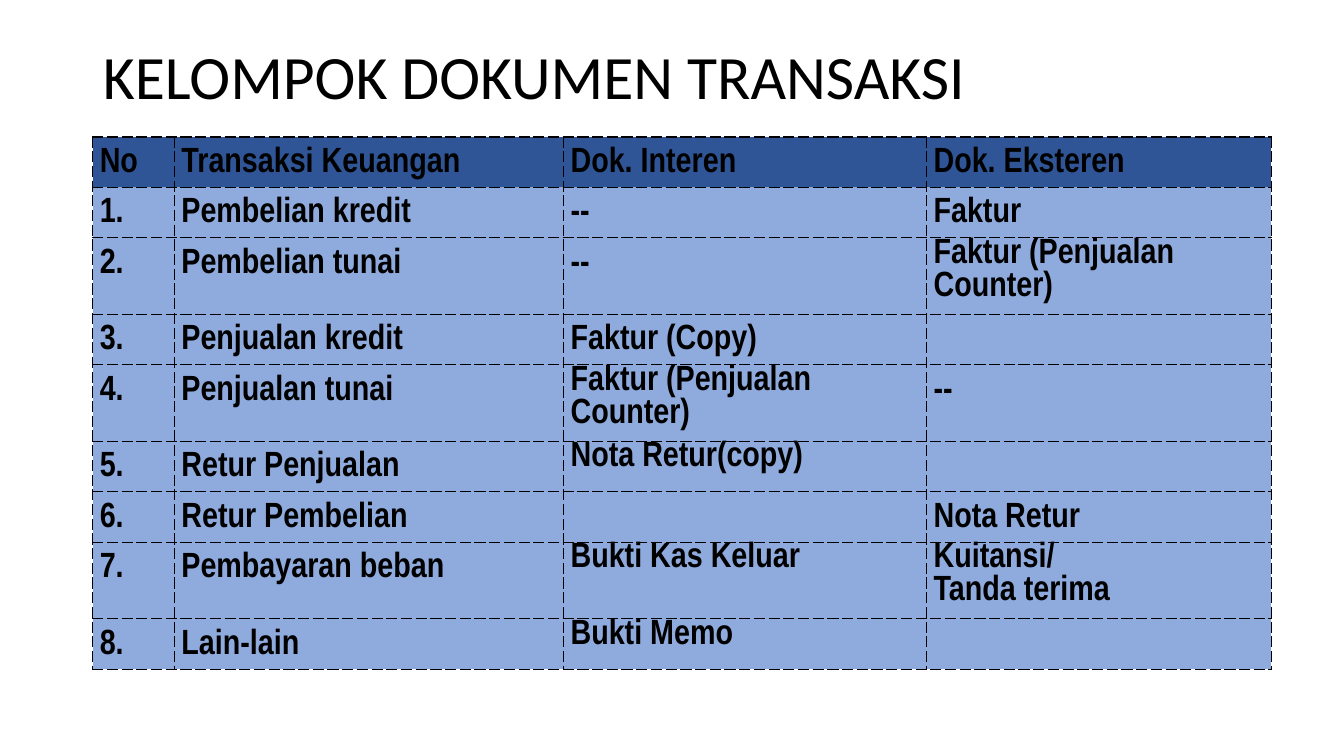
import lxml.etree
import pptx
import pptx.dml.color
import pptx.enum.dml
import pptx.enum.text
import pptx.oxml.ns
import pptx.util

Inches = pptx.util.Inches
Pt = pptx.util.Pt
RGBColor = pptx.dml.color.RGBColor

BLACK = RGBColor(0x00, 0x00, 0x00)
WHITE = RGBColor(0xFF, 0xFF, 0xFF)
HEADER_BLUE = RGBColor(0x2F, 0x55, 0x97)
BODY_BLUE = RGBColor(0x8F, 0xAA, 0xDC)

LOOSE = 1.3
TIGHT = Pt(23.5)
COLUMN_WIDTHS = [0.81, 3.86, 3.6, 3.42]
SINGLE_ROW, DOUBLE_ROW = 0.5, 0.76
COUNTER_INVOICE = "Faktur (Penjualan Counter)"
PAYMENT_RECEIPT = "Kuitansi/\nTanda terima"
TWO_LINE_ENTRIES = {COUNTER_INVOICE, PAYMENT_RECEIPT}
TIGHT_ENTRIES = TWO_LINE_ENTRIES | {"Nota Retur(copy)", "Bukti Kas Keluar", "Bukti Memo"}

HEADINGS = ["No", "Transaksi Keuangan", "Dok. Interen", "Dok. Eksteren"]
TRANSACTIONS = [
    ("Pembelian kredit", "--", "Faktur"),
    ("Pembelian tunai", "--", COUNTER_INVOICE),
    ("Penjualan kredit", "Faktur (Copy)", ""),
    ("Penjualan tunai", COUNTER_INVOICE, "--"),
    ("Retur Penjualan", "Nota Retur(copy)", ""),
    ("Retur Pembelian", "", "Nota Retur"),
    ("Pembayaran beban", "Bukti Kas Keluar", PAYMENT_RECEIPT),
    ("Lain-lain", "Bukti Memo", ""),
]


def format_paragraph(paragraph, font_name, size, spacing, bold=False):
    paragraph.line_spacing = spacing
    paragraph.font.name = font_name
    paragraph.font.size = Pt(size)
    paragraph.font.bold = bold
    paragraph.font.color.rgb = BLACK


def add_title(slide, left, top, width, height):
    title = slide.shapes.title
    title.left, title.top = Inches(left), Inches(top)
    title.width, title.height = Inches(width), Inches(height)
    frame = title.text_frame
    frame.text = "KELOMPOK DOKUMEN TRANSAKSI"
    frame.word_wrap = True
    frame.auto_size = pptx.enum.text.MSO_AUTO_SIZE.NONE
    frame.vertical_anchor = pptx.enum.text.MSO_ANCHOR.MIDDLE
    heading = frame.paragraphs[0]
    heading.alignment = pptx.enum.text.PP_ALIGN.LEFT
    format_paragraph(heading, "Calibri", 44, 0.9)


def add_dashed_borders(cell):
    properties = cell._tc.get_or_add_tcPr()
    qn = pptx.oxml.ns.qn
    for edge in ("a:lnL", "a:lnR", "a:lnT", "a:lnB"):
        border = lxml.etree.SubElement(properties, qn(edge), w=str(Pt(1)))
        fill = lxml.etree.SubElement(border, qn("a:solidFill"))
        lxml.etree.SubElement(fill, qn("a:srgbClr"), val=str(BLACK))
        lxml.etree.SubElement(border, qn("a:prstDash"), val="dash")


def fill_cell(cell, entry, colour):
    add_dashed_borders(cell)
    cell.fill.solid()
    cell.fill.fore_color.rgb = colour
    cell.margin_left = cell.margin_right = Inches(0.07)
    cell.margin_top = cell.margin_bottom = 0
    cell.text = entry
    spacing = TIGHT if entry in TIGHT_ENTRIES else LOOSE
    for paragraph in cell.text_frame.paragraphs:
        format_paragraph(paragraph, "Arial Narrow", 25, spacing, bold=True)


def add_document_table(slide, left, top):
    entries = [HEADINGS] + [
        [f"{number}.", *transaction]
        for number, transaction in enumerate(TRANSACTIONS, start=1)
    ]
    row_heights = [
        DOUBLE_ROW if TWO_LINE_ENTRIES.intersection(row) else SINGLE_ROW
        for row in entries
    ]
    documents = slide.shapes.add_table(
        len(entries), len(HEADINGS), Inches(left), Inches(top),
        Inches(sum(COLUMN_WIDTHS)), Inches(sum(row_heights)),
    ).table
    documents.horz_banding = False
    for column, width in zip(documents.columns, COLUMN_WIDTHS):
        column.width = Inches(width)
    for index, (row, height) in enumerate(zip(documents.rows, row_heights)):
        row.height = Inches(height)
        colour = BODY_BLUE if index else HEADER_BLUE
        for cell, entry in zip(row.cells, entries[index]):
            fill_cell(cell, entry, colour)


def main():
    presentation = pptx.Presentation()
    presentation.slide_width = Inches(13.33)
    presentation.slide_height = Inches(7.5)
    slide = presentation.slides.add_slide(presentation.slide_layouts[5])
    slide.background.fill.solid()
    slide.background.fill.fore_color.rgb = WHITE
    add_title(slide, 0.92, 0.4, 11.5, 0.77)
    add_document_table(slide, 0.92, 1.36)
    presentation.save("out.pptx")


if __name__ == "__main__":
    main()
